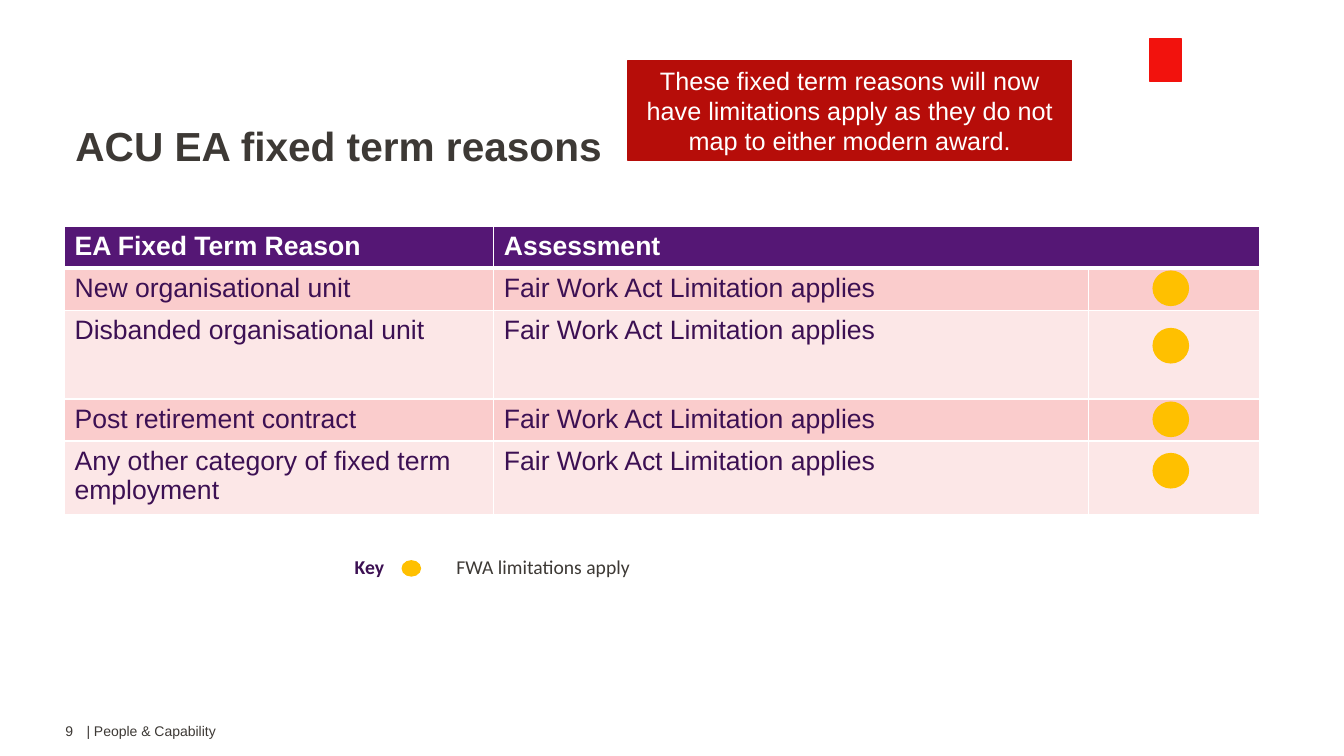
from dataclasses import dataclass, field

from lxml import etree
from pptx import Presentation
from pptx.dml.color import RGBColor
from pptx.enum.shapes import MSO_SHAPE
from pptx.enum.text import MSO_ANCHOR, PP_ALIGN
from pptx.oxml.ns import qn
from pptx.util import Pt

RECTANGLE, OVAL = MSO_SHAPE.RECTANGLE, MSO_SHAPE.OVAL
TOP, MIDDLE = MSO_ANCHOR.TOP, MSO_ANCHOR.MIDDLE
LEFT, CENTER = PP_ALIGN.LEFT, PP_ALIGN.CENTER


@dataclass
class Theme:
    """Colours and text formats of the slide."""

    white: str = "FFFFFF"
    purple: str = "551775"
    red: str = "B60D09"
    logo: str = "F2120D"
    amber: str = "FFC000"
    bands: tuple = ("FACCCC", "FCE7E7")
    text: dict = field(default_factory=lambda: {
        "title": {"name": "Arial", "size": 29, "color": "3D3935", "bold": True},
        "footer": {"name": "Arial", "size": 10, "color": "3D3935", "bold": False},
        "header": {"name": "Arial", "size": 19, "color": "FFFFFF", "bold": True},
        "body": {"name": "Arial", "size": 19, "color": "3C1053", "bold": False},
        "callout": {"name": "Arial", "size": 18, "color": "FFFFFF", "bold": False},
        "key": {"name": "Calibri", "size": 14, "color": "3C1053", "bold": True},
        "key_label": {"name": "Calibri", "size": 14, "color": "3D3935", "bold": False},
    })


class SlideBuilder:
    """Draws styled elements on one slide, with lengths in points."""

    def __init__(self, slide, theme):
        self.slide = slide
        self.theme = theme

    def fill_text(self, frame, text, style, align=LEFT, spacing=1.0):
        """Put one formatted paragraph in a text frame."""
        paragraph = frame.paragraphs[0]
        paragraph.alignment = align
        paragraph.line_spacing = spacing
        run = paragraph.add_run()
        run.text = text
        for name, value in self.theme.text[style].items():
            if name == "color":
                run.font.color.rgb = RGBColor.from_string(value)
            else:
                setattr(run.font, name, Pt(value) if name == "size" else value)

    def text(self, box, text, style, anchor=TOP, spacing=1.0):
        """Add a wrapped text box."""
        frame = self.slide.shapes.add_textbox(*map(Pt, box)).text_frame
        frame.word_wrap = True
        frame.vertical_anchor = anchor
        self.fill_text(frame, text, style, spacing=spacing)

    def shape(self, kind, box, color):
        """Add a preset shape in one flat colour."""
        shape = self.slide.shapes.add_shape(kind, *map(Pt, box))
        shape.shadow.inherit = False
        shape.fill.solid()
        shape.fill.fore_color.rgb = RGBColor.from_string(color)
        shape.line.color.rgb = RGBColor.from_string(color)
        shape.line.width = Pt(1)
        return shape

    def callout(self, box, text):
        """Add a filled box with centred text."""
        frame = self.shape(RECTANGLE, box, self.theme.red).text_frame
        frame.word_wrap = True
        frame.vertical_anchor = MIDDLE
        self.fill_text(frame, text, "callout", CENTER)

    def borders(self, cell, widths):
        """Give a cell white borders of the given widths."""
        properties = cell._tc.get_or_add_tcPr()
        for side, width in widths.items():
            line = etree.SubElement(properties, qn(f"a:ln{side}"), w=str(Pt(width)))
            fill = etree.SubElement(line, qn("a:solidFill"))
            etree.SubElement(fill, qn("a:srgbClr"), val=self.theme.white)

    def table(self, origin, widths, heights, rows, styles, fills=None):
        """Add a table, banded by row fills or left clear."""
        size = sum(widths), sum(heights)
        table = self.slide.shapes.add_table(
            len(heights), len(widths), *map(Pt, (*origin, *size))).table
        table.first_row = table.horz_banding = False
        for column, width in zip(table.columns, widths):
            column.width = Pt(width)
        for index, (row, height) in enumerate(zip(table.rows, heights)):
            row.height = Pt(height)
            for position, cell in enumerate(row.cells):
                if fills:
                    self.borders(cell, {"L": 1, "R": 1, "T": 3 if index == 1 else 1,
                                        "B": 3 if index == 0 else 1})
                    cell.fill.solid()
                    cell.fill.fore_color.rgb = RGBColor.from_string(fills[index])
                else:
                    self.borders(cell, dict.fromkeys("LRTB", 1))
                    cell.fill.background()
                if rows[index][position]:
                    self.fill_text(cell.text_frame, rows[index][position],
                                   styles[index][position])
        return table


def main():
    """Build and save the fixed term reasons slide."""
    presentation = Presentation()
    presentation.slide_width, presentation.slide_height = Pt(960), Pt(540)
    theme = Theme()
    builder = SlideBuilder(
        presentation.slides.add_slide(presentation.slide_layouts[6]), theme)

    builder.shape(RECTANGLE, (821, 28, 23, 30), theme.logo)
    builder.text((46.8, 86.4, 882.7, 38.9), "ACU EA fixed term reasons",
                 "title", MIDDLE, 0.9)
    builder.text((39.6, 512.6, 35.3, 19.4), "9", "footer")
    builder.text((54.7, 512.6, 243.4, 19.4), "| People & Capability", "footer")

    reasons = ["New organisational unit", "Disbanded organisational unit",
               "Post retirement contract",
               "Any other category of fixed term employment"]
    rows = [("EA Fixed Term Reason", "Assessment", "")]
    rows += [(reason, "Fair Work Act Limitation applies", "") for reason in reasons]
    table = builder.table(
        (46.1, 161.6), (306.7, 424.8, 122.4), (28.1, 28.1, 63.4, 28.1, 46.1), rows,
        [["header"] * 3] + [["body"] * 3] * len(reasons),
        [theme.purple, *theme.bands * 2])
    table.cell(0, 1).merge(table.cell(0, 2))
    for top in (193.7, 234.7, 287.3, 324):
        builder.shape(OVAL, (823.7, top, 25.2, 24.5), theme.amber)

    builder.table((246.2, 393.1), (37.4, 35.3, 272.2), (54.7,),
                  [("Key", "", "FWA limitations apply")],
                  [("key", "key", "key_label")])
    builder.shape(OVAL, (287.3, 400.6, 13, 10.8), theme.amber)
    builder.callout((448.6, 43.2, 316.8, 71.3),
                    "These fixed term reasons will now have limitations apply "
                    "as they do not map to either modern award.")
    presentation.save("out.pptx")


if __name__ == "__main__":
    main()
